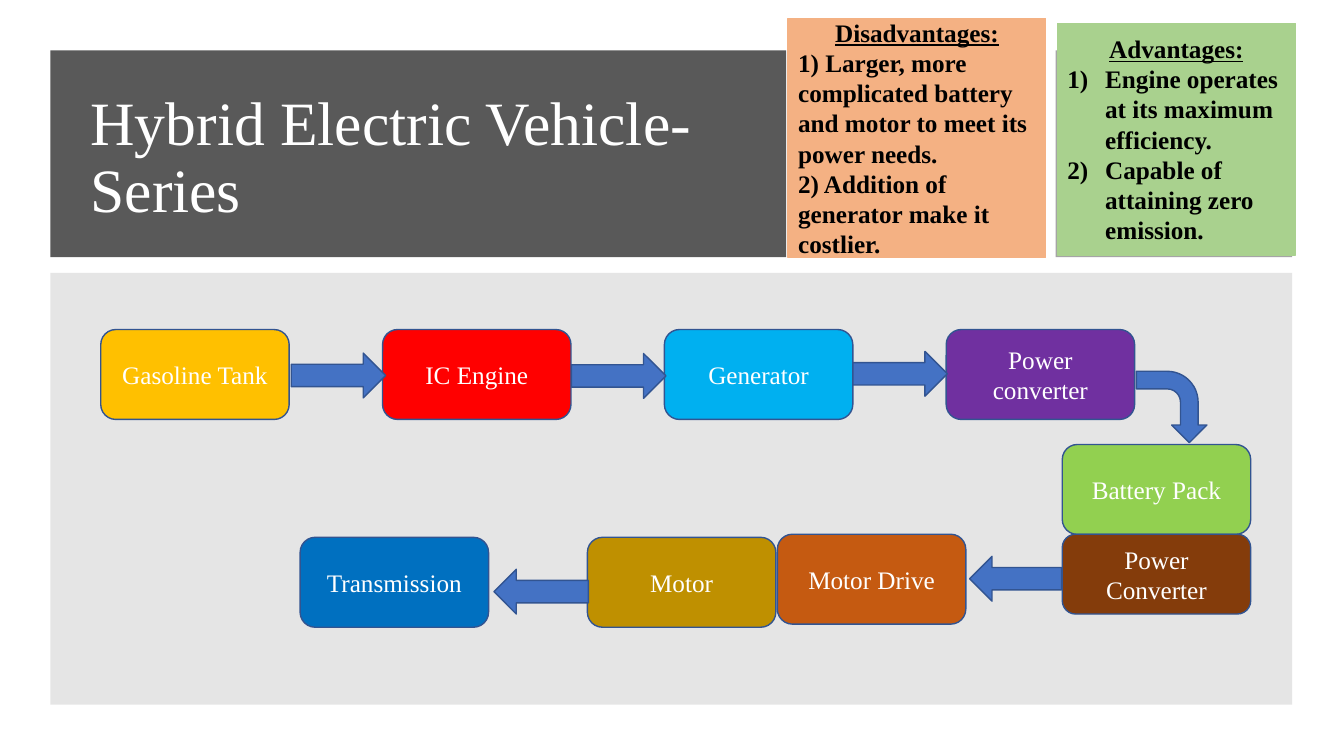
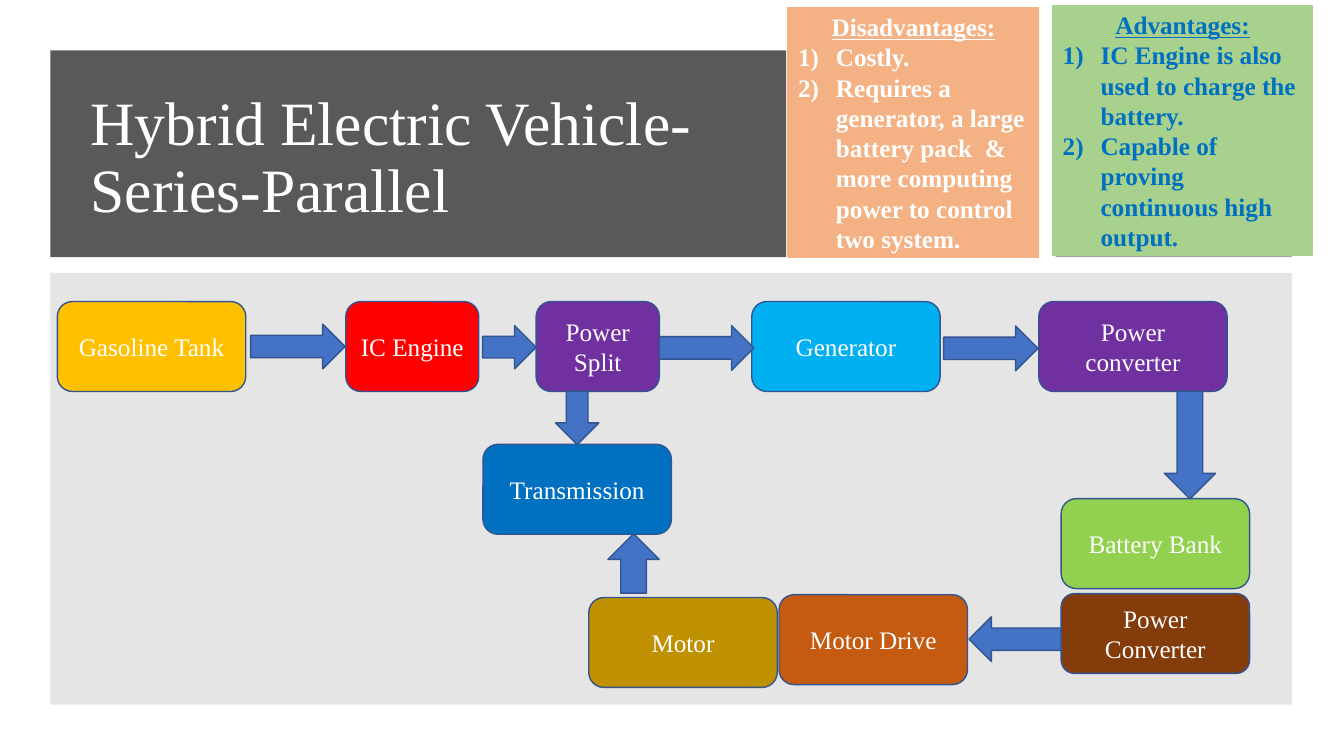
from dataclasses import dataclass
from lxml.etree import SubElement
from pptx import Presentation
from pptx.dml.color import RGBColor as Rgb
from pptx.enum.shapes import MSO_SHAPE as Kind
from pptx.enum.text import MSO_ANCHOR as Anchor, PP_ALIGN as Align
from pptx.oxml.ns import qn
from pptx.util import Pt

HUES = {
    "band": "595959", "side": "A5A5A5", "panel": "E5E5E5",
    "edge": "325491", "arrow": "4472C4",
    "tank": "FFC000", "engine": "FF0000", "dynamo": "00B0F0",
    "power": "7030A0", "battery": "92D050", "invert": "843C0B",
    "drive": "C55A11", "motor": "BF9000", "gear": "0070C0",
    "cons": "F4B183", "pros": "A9D18E",
    "white": "FFFFFF", "black": "000000",
}
FACE = "Times New Roman"
BODY = {"name": FACE, "size": Pt(18)}
BOLD = BODY | {"bold": True}
HEAD = BOLD | {"underline": True}
TITLE = {"name": FACE, "size": Pt(44)}
WIDE, TALL = 134.6, 64.2
LONG, THICK = 67.5, 32
STEP = 201.3
HANG = 27


@dataclass
class Box:
    text: str
    hue: str
    x: float
    y: float
    w: float = WIDE
    h: float = TALL


@dataclass
class Arrow:
    kind: Kind
    x: float
    y: float
    w: float = LONG
    h: float = THICK
    turn: float = 0


@dataclass
class Card:
    head: str
    items: list[str]
    hue: str
    ink: str
    x: float
    y: float
    w: float
    h: float
    listed: bool = True


@dataclass
class Page:
    title: str
    boxes: list[Box]
    arrows: list[Arrow]
    cards: list[Card]


PAGES = [
    Page(
        "Hybrid Electric Vehicle- Series",
        [Box(text, hue, 72 + STEP * i, 235.4) for i, (text, hue) in enumerate([
            ("Gasoline Tank", "tank"), ("IC Engine", "engine"),
            ("Generator", "dynamo"), ("Power converter", "power")])]
        + [
            Box("Battery Pack", "battery", 758.8, 317.5),
            Box("Power Converter", "invert", 758.8, 381.6, h=57),
            Box("Motor Drive", "drive", 555.3, 381.6),
            Box("Motor", "motor", 419.6, 383.8),
            Box("Transmission", "gear", 214.4, 383.8),
        ],
        [
            Arrow(Kind.RIGHT_ARROW, 208, 252.2),
            Arrow(Kind.RIGHT_ARROW, 408.2, 252.5),
            Arrow(Kind.RIGHT_ARROW, 609.2, 251),
            Arrow(Kind.BENT_ARROW, 811.4, 265.5, 51, 50.4, 90),
            Arrow(Kind.LEFT_ARROW, 692.6, 397.4, 65.7),
            Arrow(Kind.LEFT_ARROW, 352.8, 406.6),
        ],
        [
            Card("Disadvantages:", [
                "1) Larger, more complicated battery and motor to meet its power needs.",
                "2) Addition of generator make it costlier.",
            ], "cons", "black", 563, 13, 184, 171, listed=False),
            Card("Advantages:", [
                "Engine operates at its maximum efficiency.",
                "Capable of attaining zero emission.",
            ], "pros", "black", 755.3, 16.6, 170, 165.6),
        ],
    ),
    Page(
        "Hybrid Electric Vehicle- Series-Parallel",
        [
            Box("Gasoline Tank", "tank", 41, 215.4),
            Box("IC Engine", "engine", 247, 215.4, w=95),
            Box("Power Split", "power", 383, 215.4, w=88),
            Box("Generator", "dynamo", 537, 215.4),
            Box("Power converter", "power", 742, 215.4),
            Box("Battery Bank", "battery", 758, 356.2),
            Box("Power Converter", "invert", 758, 424, h=57),
            Box("Motor Drive", "drive", 556.5, 424.8),
            Box("Motor", "motor", 420.6, 426.8),
            Box("Transmission", "gear", 345, 317.4),
        ],
        [
            Arrow(Kind.RIGHT_ARROW, 179, 231.5),
            Arrow(Kind.RIGHT_ARROW, 344.8, 232.5, 38.2, 31),
            Arrow(Kind.RIGHT_ARROW, 471, 232.5),
            Arrow(Kind.RIGHT_ARROW, 674, 232.8),
            Arrow(Kind.DOWN_ARROW, 396.8, 279.4, 31, 38.2),
            Arrow(Kind.DOWN_ARROW, 831.6, 279.4, 36.7, 77),
            Arrow(Kind.UP_ARROW, 434.2, 381.2, 36.7, 42.5),
            Arrow(Kind.LEFT_ARROW, 692.2, 440.6, 65.7),
        ],
        [
            Card("Disadvantages:", [
                "Costly.",
                "Requires a generator, a large battery pack  & more computing "
                "power to control two system.",
            ], "cons", "white", 563, 5.6, 179, 178),
            Card("Advantages:", [
                "IC Engine is also used to charge the battery.",
                "Capable of proving continuous high output.",
            ], "pros", "gear", 752, 4.2, 185.4, 178),
        ],
    ),
]


def color(name: str) -> Rgb:
    return Rgb.from_string(HUES[name])


def shape(slide, kind: Kind, x: float, y: float, w: float, h: float,
          hue: str, edge: str = ""):
    item = slide.shapes.add_shape(kind, Pt(x), Pt(y), Pt(w), Pt(h))
    item.shadow.inherit = False
    item.fill.solid()
    item.fill.fore_color.rgb = color(hue)
    if edge:
        item.line.color.rgb = color(edge)
        item.line.width = Pt(1)
    else:
        item.line.fill.background()
    return item


def write(para, text: str, style: dict, ink: str, align: Align) -> None:
    para.alignment = align
    run = para.add_run()
    run.text = text
    for key, value in style.items():
        setattr(run.font, key, value)
    run.font.color.rgb = color(ink)


def number(para) -> None:
    props = para._p.get_or_add_pPr()
    props.set("marL", str(Pt(HANG)))
    props.set("indent", str(-Pt(HANG)))
    SubElement(props, qn("a:buFont"), typeface="+mj-lt")
    SubElement(props, qn("a:buAutoNum"), type="arabicParenR")


def frame(item):
    body = item.text_frame
    body.word_wrap = True
    body.vertical_anchor = Anchor.MIDDLE
    return body


def base(slide, title: str) -> None:
    shape(slide, Kind.RECTANGLE, 36, 36, 525.6, 147.6, "band")
    shape(slide, Kind.RECTANGLE, 754, 36, 169, 147.6, "side")
    shape(slide, Kind.RECTANGLE, 36, 195, 887, 308.4, "panel")
    label = slide.shapes.add_textbox(Pt(57.6), Pt(57.6), Pt(479.5), Pt(112.3))
    para = frame(label).paragraphs[0]
    para.line_spacing = 0.9
    write(para, title, TITLE, "white", Align.LEFT)


def block(slide, box: Box) -> None:
    item = shape(slide, Kind.ROUNDED_RECTANGLE, box.x, box.y, box.w, box.h,
                 box.hue, "edge")
    write(frame(item).paragraphs[0], box.text, BODY, "white", Align.CENTER)


def point(slide, arrow: Arrow) -> None:
    item = shape(slide, arrow.kind, arrow.x, arrow.y, arrow.w, arrow.h,
                 "arrow", "edge")
    item.rotation = arrow.turn


def note(slide, card: Card) -> None:
    item = shape(slide, Kind.RECTANGLE, card.x, card.y, card.w, card.h,
                 card.hue, card.hue)
    body = frame(item)
    write(body.paragraphs[0], card.head, HEAD, card.ink, Align.CENTER)
    for text in card.items:
        para = body.add_paragraph()
        write(para, text, BOLD, card.ink, Align.LEFT)
        if card.listed:
            number(para)


def main() -> None:
    deck = Presentation()
    deck.slide_width, deck.slide_height = Pt(960), Pt(540)
    for page in PAGES:
        slide = deck.slides.add_slide(deck.slide_layouts[6])
        base(slide, page.title)
        for draw, items in ((block, page.boxes), (point, page.arrows),
                            (note, page.cards)):
            for item in items:
                draw(slide, item)
    deck.save("out.pptx")


if __name__ == "__main__":
    main()
